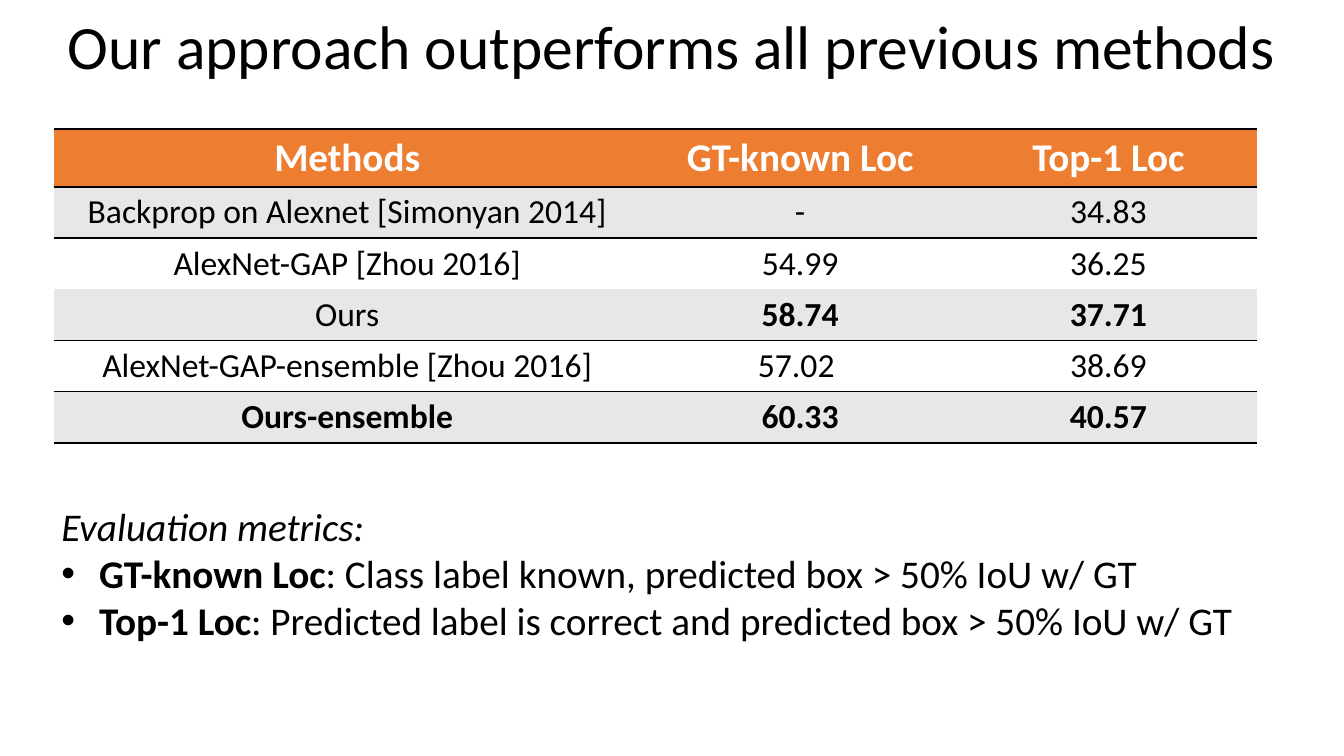
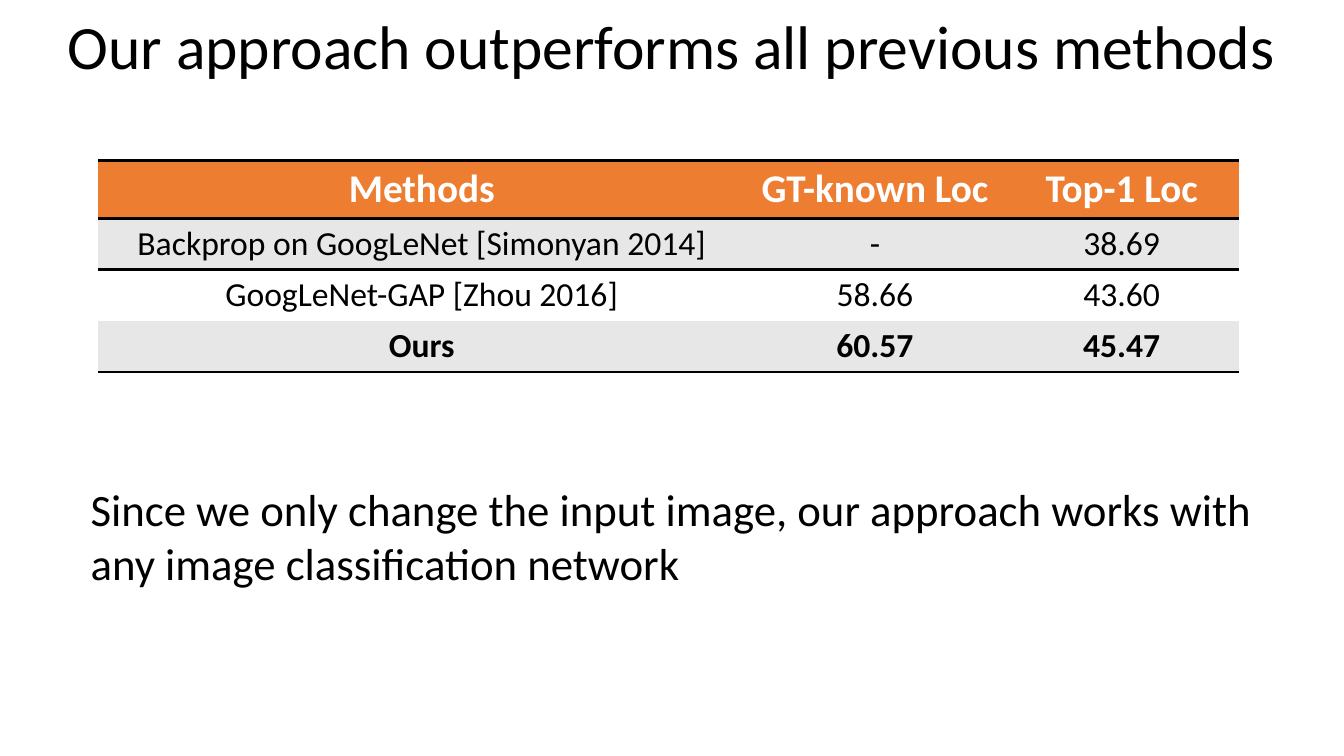
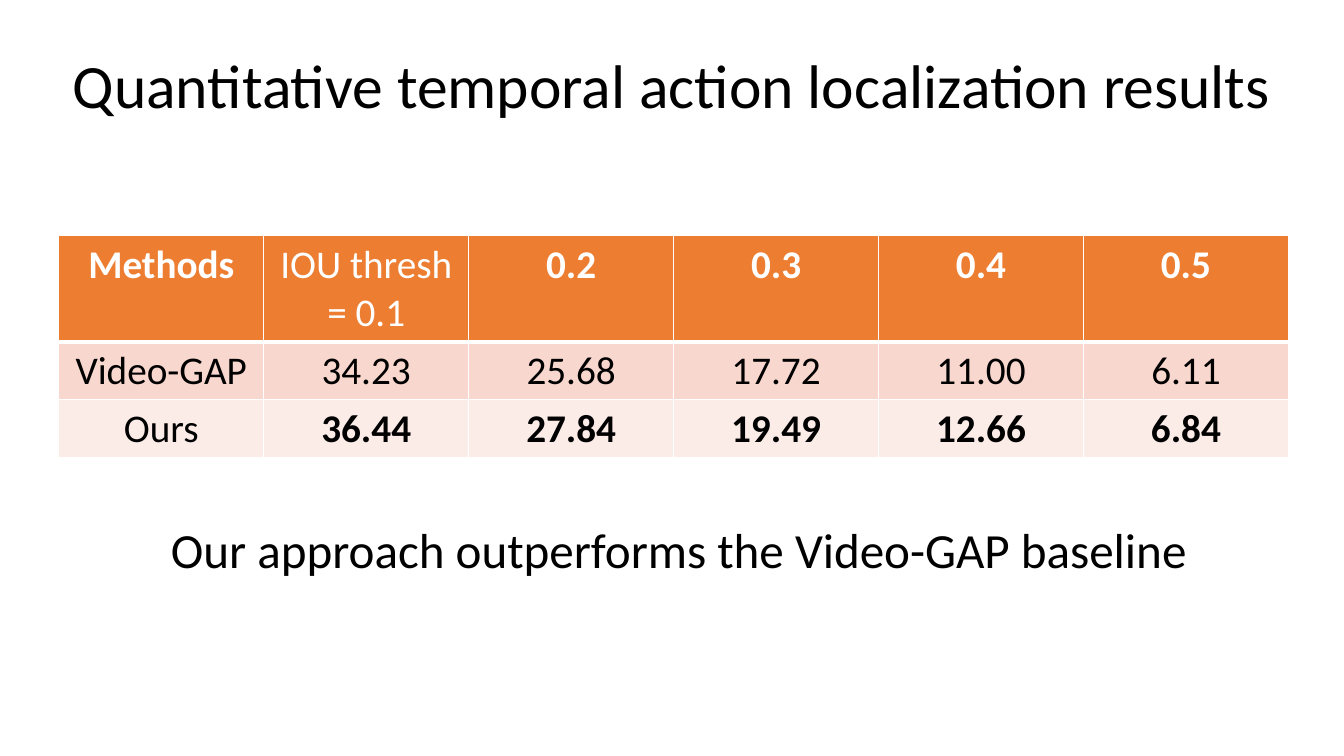
"""Build three slides of localization results with python-pptx."""
from lxml.etree import SubElement
from pptx import Presentation
from pptx.dml.color import RGBColor
from pptx.enum.text import MSO_ANCHOR as Anchor, MSO_AUTO_SIZE as AutoSize, PP_ALIGN as Align
from pptx.oxml.ns import qn
from pptx.util import Pt

FONT = "Calibri"
BLACK = RGBColor(0x00, 0x00, 0x00)
WHITE = RGBColor(0xFF, 0xFF, 0xFF)
ORANGE = RGBColor(0xED, 0x7D, 0x31)
GREY = RGBColor(0xE7, 0xE7, 0xE7)
PINK = RGBColor(0xF8, 0xD7, 0xCE)
PALE_PINK = RGBColor(0xFC, 0xEC, 0xE8)
PLAIN_TABLE_STYLE = "{2D5ABB26-0587-4C30-8999-92F81FD0307C}"
HEADER_SIZE = 28
ALL = (0, 1, 2)


def add_run(paragraph, text, size, color=BLACK, bold=False, italic=False):
    run = paragraph.add_run()
    run.text = text
    run.font.name = FONT
    run.font.size = Pt(size)
    run.font.color.rgb = color
    run.font.bold = bold
    run.font.italic = italic


def add_border(cell, side, color, width):
    properties = cell._tc.get_or_add_tcPr()
    line = SubElement(properties, qn(f"a:ln{side}"), w=str(Pt(width)))
    fill = SubElement(line, qn("a:solidFill"))
    SubElement(fill, qn("a:srgbClr"), val=str(color))


presentation = Presentation()
presentation.slide_width = Pt(960)
presentation.slide_height = Pt(540)
title_only = presentation.slide_layouts[5]

results = [
    {
        "title": "Our approach outperforms all previous methods",
        "title_top": 0.7,
        "position": (38.5, 92),
        "widths": (419, 228, 212.5),
        "heights": (41.4, 36.6),
        "body_size": 24,
        "bands": (GREY, WHITE),
        "rule_color": BLACK,
        "rules": {0: 2, 1: 2, 4: 1, 5: 1, 6: 2},
        "column_rule": 0,
        "rows": [
            (("Methods", "GT-known Loc", "Top-1 Loc"), ALL),
            (("Backprop on Alexnet [Simonyan 2014]", "-", "34.83"), ()),
            (("AlexNet-GAP [Zhou 2016]", "54.99", "36.25"), ()),
            (("Ours", "58.74", "37.71"), (1, 2)),
            (("AlexNet-GAP-ensemble [Zhou 2016]", "57.02 ", "38.69"), ()),
            (("Ours-ensemble", "60.33", "40.57"), ALL),
        ],
    },
    {
        "title": "Our approach outperforms all previous methods",
        "title_top": 0.7,
        "position": (70, 114.5),
        "widths": (462.5, 185, 167.5),
        "heights": (41.4, 36.6),
        "body_size": 24,
        "bands": (GREY, WHITE),
        "rule_color": BLACK,
        "rules": {0: 2, 1: 2, 4: 2},
        "column_rule": 0,
        "rows": [
            (("Methods", "GT-known Loc", "Top-1 Loc"), ALL),
            (("Backprop on GoogLeNet [Simonyan 2014]", "-", "38.69"), ()),
            (("GoogLeNet-GAP [Zhou 2016]", "58.66", "43.60"), ()),
            (("Ours", "60.57", "45.47"), ALL),
        ],
    },
    {
        "title": "Quantitative temporal action localization results",
        "title_top": 28.8,
        "position": (42, 168.5),
        "widths": (146.4,) * 6,
        "heights": (75.4, 41.4),
        "body_size": 28,
        "bands": (PINK, PALE_PINK),
        "rule_color": WHITE,
        "rules": {0: 1, 1: 3, 2: 1, 3: 1},
        "column_rule": 1,
        "rows": [
            (("Methods", "IOU thresh = 0.1", "0.2", "0.3", "0.4", "0.5"), (0, 2, 3, 4, 5)),
            (("Video-GAP", "34.23", "25.68", "17.72", "11.00", "6.11"), ()),
            (("Ours", "36.44", "27.84", "19.49", "12.66", "6.84"), (1, 2, 3, 4, 5)),
        ],
    },
]

slides = []
for result in results:
    slide = presentation.slides.add_slide(title_only)
    slides.append(slide)

    title = slide.shapes.title
    title.left, title.top = Pt(0), Pt(result["title_top"])
    title.width, title.height = Pt(960), Pt(69)
    title.text_frame.auto_size = AutoSize.NONE
    title.text_frame.word_wrap = True
    title.text_frame.vertical_anchor = Anchor.MIDDLE
    paragraph = title.text_frame.paragraphs[0]
    paragraph.alignment = Align.CENTER
    paragraph.line_spacing = 0.9
    add_run(paragraph, result["title"], 44)

    rows, widths = result["rows"], result["widths"]
    header_height, body_height = result["heights"]
    left, top = result["position"]
    height = header_height + body_height * (len(rows) - 1)
    frame = slide.shapes.add_table(
        len(rows), len(widths), Pt(left), Pt(top), Pt(sum(widths)), Pt(height))
    table = frame.table
    table._tbl.tblPr.find(qn("a:tableStyleId")).text = PLAIN_TABLE_STYLE
    for column, width in zip(table.columns, widths):
        column.width = Pt(width)

    for row_index, (texts, bold_columns) in enumerate(rows):
        is_header = row_index == 0
        table.rows[row_index].height = Pt(header_height if is_header else body_height)
        for column_index, text in enumerate(texts):
            cell = table.cell(row_index, column_index)
            borders = {
                "L": result["column_rule"],
                "R": result["column_rule"],
                "T": result["rules"].get(row_index),
                "B": result["rules"].get(row_index + 1),
            }
            for side, width in borders.items():
                if width:
                    add_border(cell, side, result["rule_color"], width)
            cell.fill.solid()
            cell.fill.fore_color.rgb = ORANGE if is_header else result["bands"][(row_index - 1) % 2]
            paragraph = cell.text_frame.paragraphs[0]
            paragraph.alignment = Align.CENTER
            add_run(paragraph, text,
                    HEADER_SIZE if is_header else result["body_size"],
                    WHITE if is_header else BLACK,
                    bold=column_index in bold_columns)

metrics_slide, network_slide, temporal_slide = slides

metrics = metrics_slide.shapes.add_textbox(Pt(36.7), Pt(355), Pt(867), Pt(109)).text_frame
metrics.word_wrap = True
add_run(metrics.paragraphs[0], "Evaluation metrics:", 28, italic=True)
for name, meaning in [
    ("GT-known Loc", ": Class label known, predicted box > 50% IoU w/ GT"),
    ("Top-1 Loc", ": Predicted label is correct and predicted box > 50% IoU w/ GT"),
]:
    paragraph = metrics.add_paragraph()
    properties = paragraph._p.get_or_add_pPr()
    properties.set("marL", str(Pt(27)))
    properties.set("indent", str(Pt(-27)))
    SubElement(properties, qn("a:buFont"), typeface="Arial")
    SubElement(properties, qn("a:buChar"), char="•")
    add_run(paragraph, name, 28, bold=True)
    add_run(paragraph, meaning, 28)

network = network_slide.shapes.add_textbox(Pt(57.6), Pt(340.6), Pt(849), Pt(85)).text_frame
network.word_wrap = True
add_run(network.paragraphs[0],
        "Since we only change the input image, our approach works with any image classification network",
        32)

conclusion = temporal_slide.shapes.add_textbox(Pt(39.6), Pt(360), Pt(890.6), Pt(69)).text_frame
conclusion.word_wrap = True
conclusion.vertical_anchor = Anchor.MIDDLE
paragraph = conclusion.paragraphs[0]
paragraph.alignment = Align.CENTER
paragraph.line_spacing = 0.9
add_run(paragraph, "Our approach outperforms the Video-GAP baseline", 35.1)

presentation.save("out.pptx")
